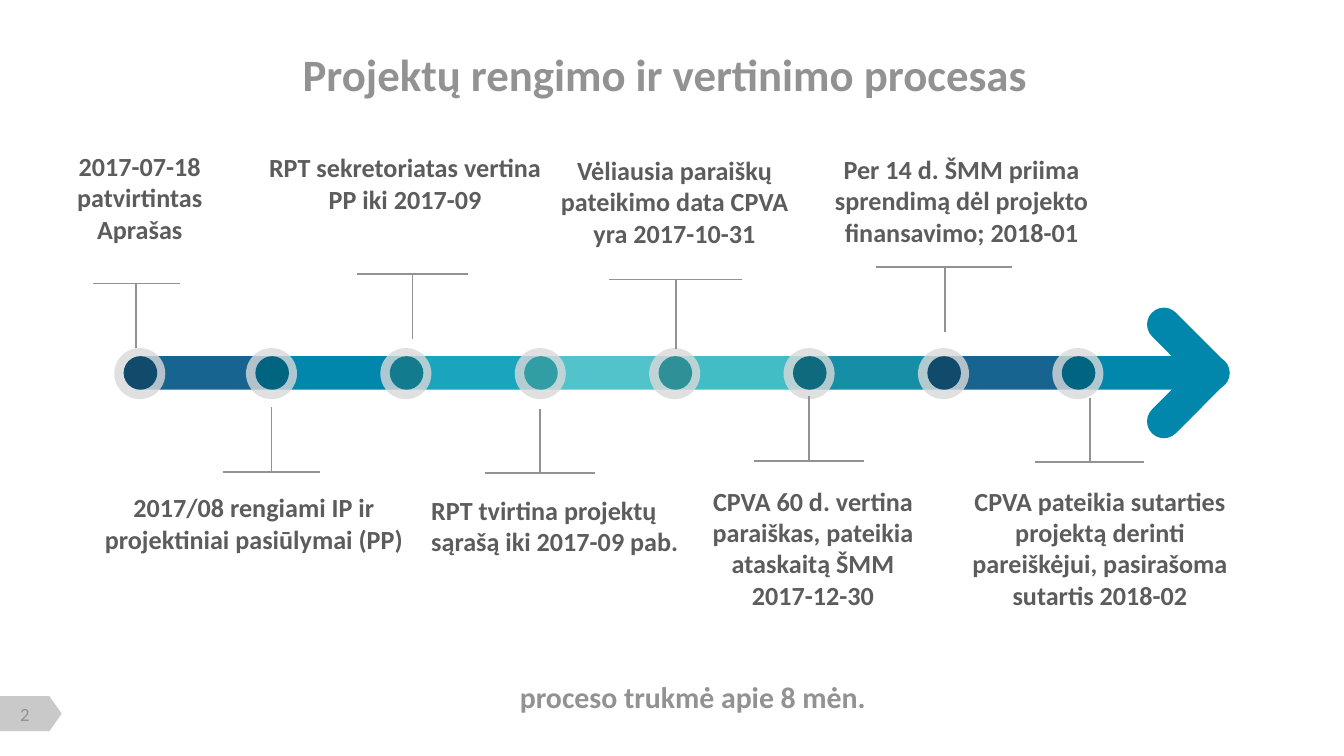
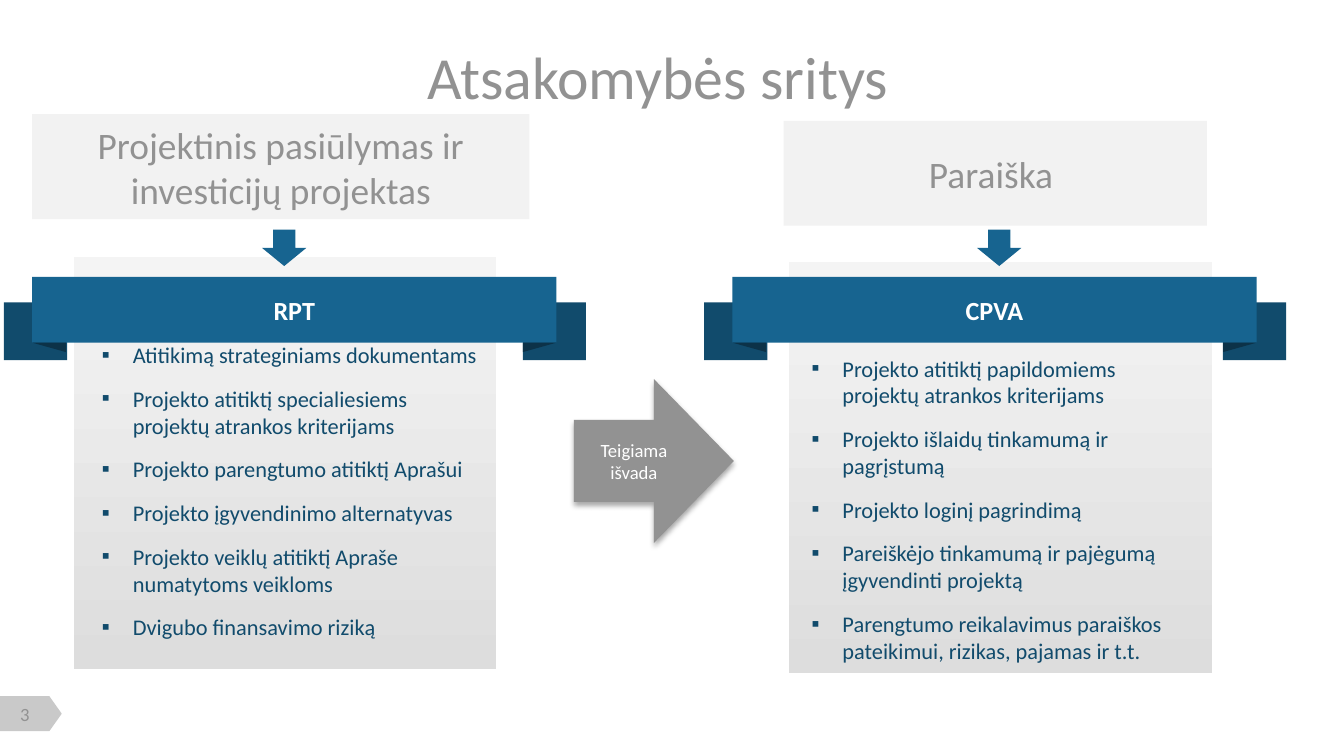
"""Build a project timeline slide and a responsibilities slide."""
from lxml import etree
from pptx import Presentation
from pptx import util as u
from pptx.dml.color import RGBColor
from pptx.enum import shapes, text
from pptx.oxml.ns import qn

FONT = "Calibri"
WHITE = RGBColor(0xFF, 0xFF, 0xFF)
GREY = RGBColor(0x92, 0x92, 0x92)
DARK_GREY = RGBColor(0x5C, 0x5C, 0x5C)
TAG_GREY = RGBColor(0xC9, 0xC9, 0xC9)
HALO_GREY = RGBColor(0xD9, 0xD9, 0xD9)
HEADER_GREY = RGBColor(0xF2, 0xF2, 0xF2)
PANEL_DARK = RGBColor(0xDD, 0xDD, 0xDD)
PANEL_LIGHT = RGBColor(0xF4, 0xF4, 0xF4)
BLUE = RGBColor(0x17, 0x64, 0x90)
NAVY = RGBColor(0x11, 0x4B, 0x6C)
FOLD_NAVY = RGBColor(0x0C, 0x32, 0x48)
OCEAN = RGBColor(0x01, 0x87, 0xAC)
DEEP_OCEAN = RGBColor(0x01, 0x65, 0x81)

KIND = shapes.MSO_SHAPE
LEFT, CENTER = text.PP_ALIGN.LEFT, text.PP_ALIGN.CENTER
TOP, MIDDLE = text.MSO_ANCHOR.TOP, text.MSO_ANCHOR.MIDDLE


def paint(shape, colour):
    """Give a shape a flat fill with no outline and no shadow."""
    shape.shadow.inherit = False
    shape.fill.solid()
    shape.fill.fore_color.rgb = colour
    shape.line.fill.background()
    return shape


def write(shape, lines, size, colour, bold=False, align=CENTER, anchor=MIDDLE, left_inset=0.1):
    """Write one paragraph per line and return the paragraphs."""
    frame = shape.text_frame
    frame.word_wrap = True
    frame.vertical_anchor = anchor
    frame.margin_left = u.Inches(left_inset)
    for index, line in enumerate(lines):
        paragraph = frame.add_paragraph() if index else frame.paragraphs[0]
        paragraph.alignment = align
        run = paragraph.add_run()
        run.text = line
        run.font.name = FONT
        run.font.size = u.Pt(size)
        run.font.bold = bold
        run.font.color.rgb = colour
    return frame.paragraphs


presentation = Presentation()
presentation.slide_width = u.Inches(10)
presentation.slide_height = presentation.slide_width * 9 // 16

titles = [
    ("2", "Projektų rengimo ir vertinimo procesas", 0.35, 24, True),
    ("3", "Atsakomybės sritys ", 0.37, 32, False),
]
for number, title, top, size, bold in titles:
    slide = presentation.slides.add_slide(presentation.slide_layouts[6])
    tag = slide.shapes.add_shape(KIND.FLOWCHART_OFFPAGE_CONNECTOR, *map(u.Inches, (0.1, 5.08, 0.26, 0.46)))
    paint(tag, TAG_GREY).rotation = 270
    page_number = slide.shapes.add_textbox(*map(u.Inches, (0.02, 5.23, 0.33, 0.17)))
    write(page_number, [number], 10, GREY, left_inset=0)
    frame = page_number.text_frame
    frame.margin_right = frame.margin_top = frame.margin_bottom = 0
    title_box = slide.shapes.add_textbox(*map(u.Inches, (0.42, top, 9.15, 0.39)))
    write(title_box, [title], size, GREY, bold, left_inset=0)

timeline, duties = presentation.slides

steps = [
    (BLUE, NAVY),
    (OCEAN, DEEP_OCEAN),
    (RGBColor(0x1A, 0xA4, 0xBE), RGBColor(0x13, 0x7B, 0x8E)),
    (RGBColor(0x52, 0xC3, 0xCB), RGBColor(0x31, 0x9D, 0xA4)),
    (RGBColor(0x42, 0xBD, 0xC6), RGBColor(0x2E, 0x91, 0x98)),
    (RGBColor(0x16, 0x8E, 0xA6), RGBColor(0x10, 0x6A, 0x7D)),
    (BLUE, NAVY),
    (OCEAN, DEEP_OCEAN),
]
for index, (bar_colour, dot_colour) in enumerate(steps):
    left = 0.9 + index if index else 0.92
    parts = [
        (KIND.ROUNDED_RECTANGLE, (left, 2.65, 1.25, 0.25), bar_colour),
        (KIND.OVAL, (left - 0.07, 2.59, 0.38, 0.38), HALO_GREY),
        (KIND.OVAL, (left, 2.65, 0.25, 0.25), dot_colour),
    ]
    for kind, box, colour in parts:
        shape = paint(timeline.shapes.add_shape(kind, *map(u.Inches, box)), colour)
        if kind == KIND.ROUNDED_RECTANGLE:
            shape.adjustments[0] = 0.5
        if colour == HALO_GREY:
            etree.SubElement(shape.element.spPr.find(".//" + qn("a:srgbClr")), qn("a:alpha"), val="80000")

for top, angle in ((2.47, 45), (2.83, 315)):
    arm = timeline.shapes.add_shape(KIND.ROUNDED_RECTANGLE, *map(u.Inches, (8.46, top, 0.76, 0.25)))
    paint(arm, OCEAN).rotation = angle
    arm.adjustments[0] = 0.5

callouts = [
    (["2017-07-18 patvirtintas Aprašas"], (0.45, 1.07, 1.18, 0.81), CENTER, 1.01, 2.59, 2.11, 0.69, 1.34),
    (["2017/08 rengiami IP ir projektiniai pasiūlymai (PP)"], (0.63, 3.61, 2.52, 0.57),
     CENTER, 2.02, 3.03, 3.51, 1.66, 2.38),
    (["RPT sekretoriatas vertina PP iki 2017-09"], (1.88, 1.08, 2.27, 0.57),
     CENTER, 3.07, 2.52, 2.04, 2.66, 3.48),
    (["RPT tvirtina projektų sąrašą iki 2017-09 pab."], (3.11, 3.63, 2.05, 0.57),
     LEFT, 4.02, 3.04, 3.52, 3.61, 4.43),
    (["Vėliausia paraiškų pateikimo data CPVA yra 2017-10-31"], (3.99, 1.1, 2.06, 0.81),
     CENTER, 5.03, 2.6, 2.08, 4.53, 5.52),
    (["CPVA 60 d. vertina paraiškas, pateikia ataskaitą ŠMM", "2017-12-30"], (5.18, 3.56, 1.74, 1.04),
     CENTER, 6.02, 2.95, 3.43, 5.61, 6.43),
    (["Per 14 d. ŠMM priima sprendimą dėl projekto finansavimo; 2018-01"], (5.97, 1.09, 2.37, 0.81),
     CENTER, 7.03, 2.47, 1.99, 6.52, 7.53),
    (["CPVA pateikia sutarties projektą derinti pareiškėjui, pasirašoma sutartis 2018-02"],
     (6.98, 3.56, 2.41, 1.04), CENTER, 8.11, 2.96, 3.44, 7.7, 8.51),
]
for lines, box, align, stem, stem_start, cap, cap_left, cap_right in callouts:
    label = timeline.shapes.add_textbox(*map(u.Inches, box))
    write(label, lines, 14, DARK_GREY, True, align, TOP)
    for ends in ((stem, stem_start, stem, cap), (cap_right, cap, cap_left, cap)):
        line = timeline.shapes.add_connector(shapes.MSO_CONNECTOR.STRAIGHT, *map(u.Inches, ends))
        line.line.color.rgb = GREY
        line.line.width = u.Pt(1)
        etree.SubElement(line.element.spPr, qn("a:effectLst"))

duration = timeline.shapes.add_textbox(*map(u.Inches, (0.63, 4.99, 9.15, 0.39)))
write(duration, ["proceso trukmė apie 8 mėn."], 16, GREY, True, left_inset=0)

columns = [
    ("RPT", 0.24, (0.55, 1.91, 3.14, 3.07), (0.66, 2.49, 3.08, 2.34), (0.24, 0.85, 3.7, 0.78), 1.95,
     ["Projektinis pasiūlymas ir", "investicijų projektas"],
     ["Atitikimą strateginiams dokumentams",
      "Projekto atitiktį specialiesiems projektų atrankos kriterijams",
      "Projekto parengtumo atitiktį Aprašui",
      "Projekto įgyvendinimo alternatyvas",
      "Projekto veiklų atitiktį Apraše numatytoms veikloms",
      "Dvigubo finansavimo riziką"]),
    ("CPVA", 5.45, (5.87, 1.95, 3.15, 3.06), (5.94, 2.59, 3.02, 2.42), (5.83, 0.9, 3.15, 0.78), 7.27,
     ["Paraiška "],
     ["Projekto atitiktį papildomiems projektų atrankos kriterijams",
      "Projekto išlaidų tinkamumą ir pagrįstumą",
      "Projekto loginį pagrindimą",
      "Pareiškėjo tinkamumą ir pajėgumą įgyvendinti projektą",
      "Parengtumo reikalavimus paraiškos pateikimui, rizikas, pajamas ir t.t."]),
]
for owner, left, panel_box, list_box, header_box, arrow_left, header_lines, items in columns:
    panel = paint(duties.shapes.add_shape(KIND.RECTANGLE, *map(u.Inches, panel_box)), PANEL_DARK)
    panel.fill.gradient()
    panel.fill.gradient_angle = 90
    for stop, colour in zip(panel.fill.gradient_stops, (PANEL_DARK, PANEL_LIGHT)):
        stop.color.rgb = colour

    bullets = duties.shapes.add_textbox(*map(u.Inches, list_box))
    for paragraph in write(bullets, items, 12, NAVY, align=LEFT, anchor=TOP):
        paragraph.space_after = u.Pt(9)
        properties = paragraph._p.get_or_add_pPr()
        properties.set("marL", str(u.Inches(0.23)))
        properties.set("indent", str(u.Inches(-0.23)))
        etree.SubElement(properties, qn("a:buFont"), typeface=FONT)
        etree.SubElement(properties, qn("a:buChar"), char="▪")

    header = paint(duties.shapes.add_shape(KIND.RECTANGLE, *map(u.Inches, header_box)), HEADER_GREY)
    write(header, header_lines, 20, GREY)

    for tail_left in (left - 0.21, left + 3.65):
        tail_box = (tail_left, 2.25, 0.47, 0.43)
        paint(duties.shapes.add_shape(KIND.RECTANGLE, *map(u.Inches, tail_box)), NAVY)
    ribbon = duties.shapes.add_shape(KIND.RECTANGLE, *map(u.Inches, (left, 2.06, 3.9, 0.49)))
    write(paint(ribbon, BLUE), [owner], 14, WHITE, True)
    for outer, inner in ((left, left + 0.25), (left + 3.9, left + 3.65)):
        fold = duties.shapes.build_freeform(u.Inches(outer), u.Inches(2.55))
        fold.add_line_segments([(u.Inches(inner), u.Inches(2.55)), (u.Inches(inner), u.Inches(2.62))])
        paint(fold.convert_to_shape(), FOLD_NAVY)

    arrow_box = (arrow_left, 1.71, 0.33, 0.27)
    paint(duties.shapes.add_shape(KIND.DOWN_ARROW, *map(u.Inches, arrow_box)), BLUE)

verdict = duties.shapes.add_shape(KIND.RIGHT_ARROW, *map(u.Inches, (4.27, 2.82, 1.19, 1.22)))
write(paint(verdict, GREY), ["Teigiama išvada"], 10, WHITE)
shadow = etree.SubElement(
    verdict.element.spPr.find(qn("a:effectLst")), qn("a:outerShdw"),
    blurRad=str(u.Pt(3.1)), dist=str(u.Pt(1.8)), dir="5400000", rotWithShape="0")
shadow_colour = etree.SubElement(shadow, qn("a:srgbClr"), val="000000")
etree.SubElement(shadow_colour, qn("a:alpha"), val="35000")

presentation.save("out.pptx")
